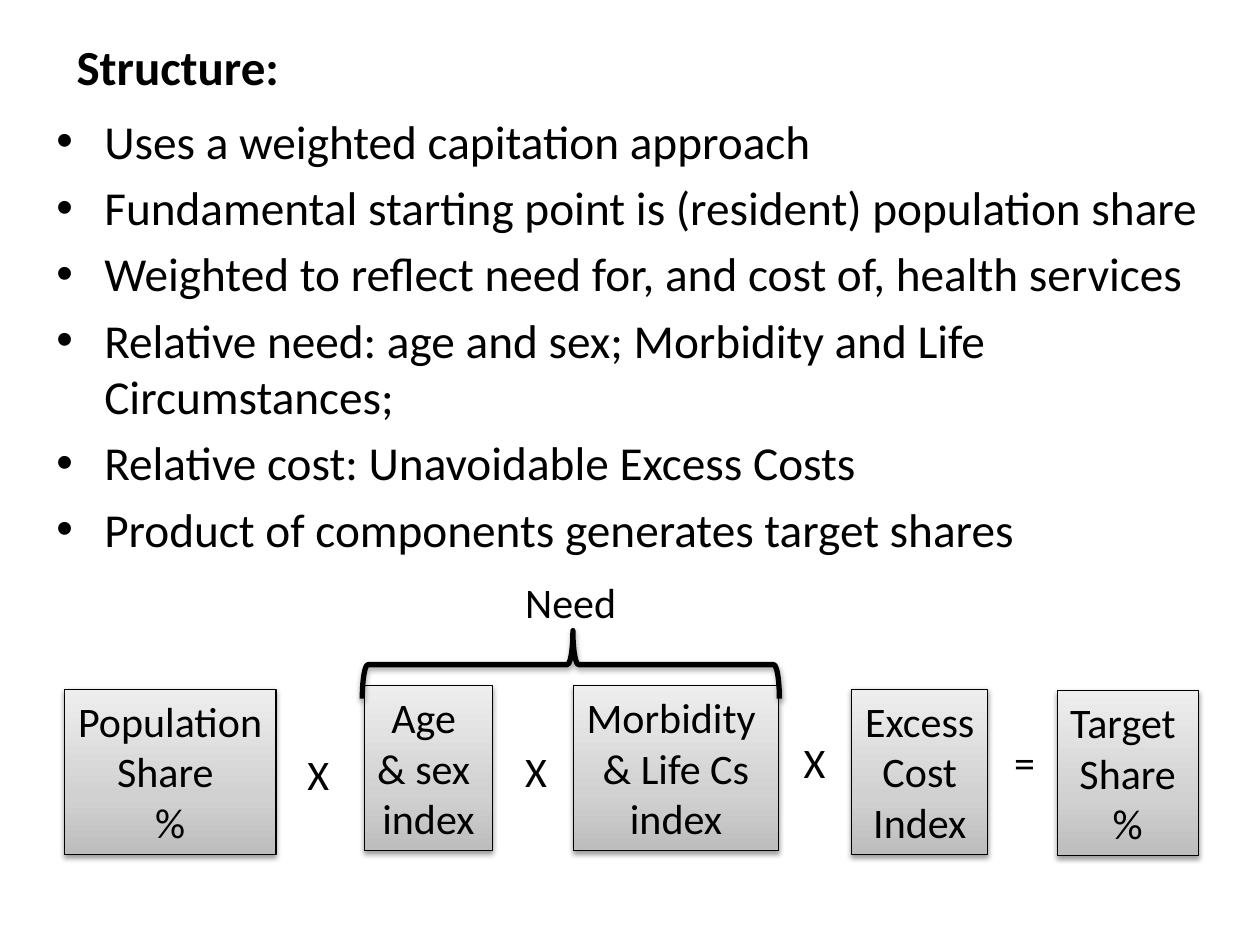
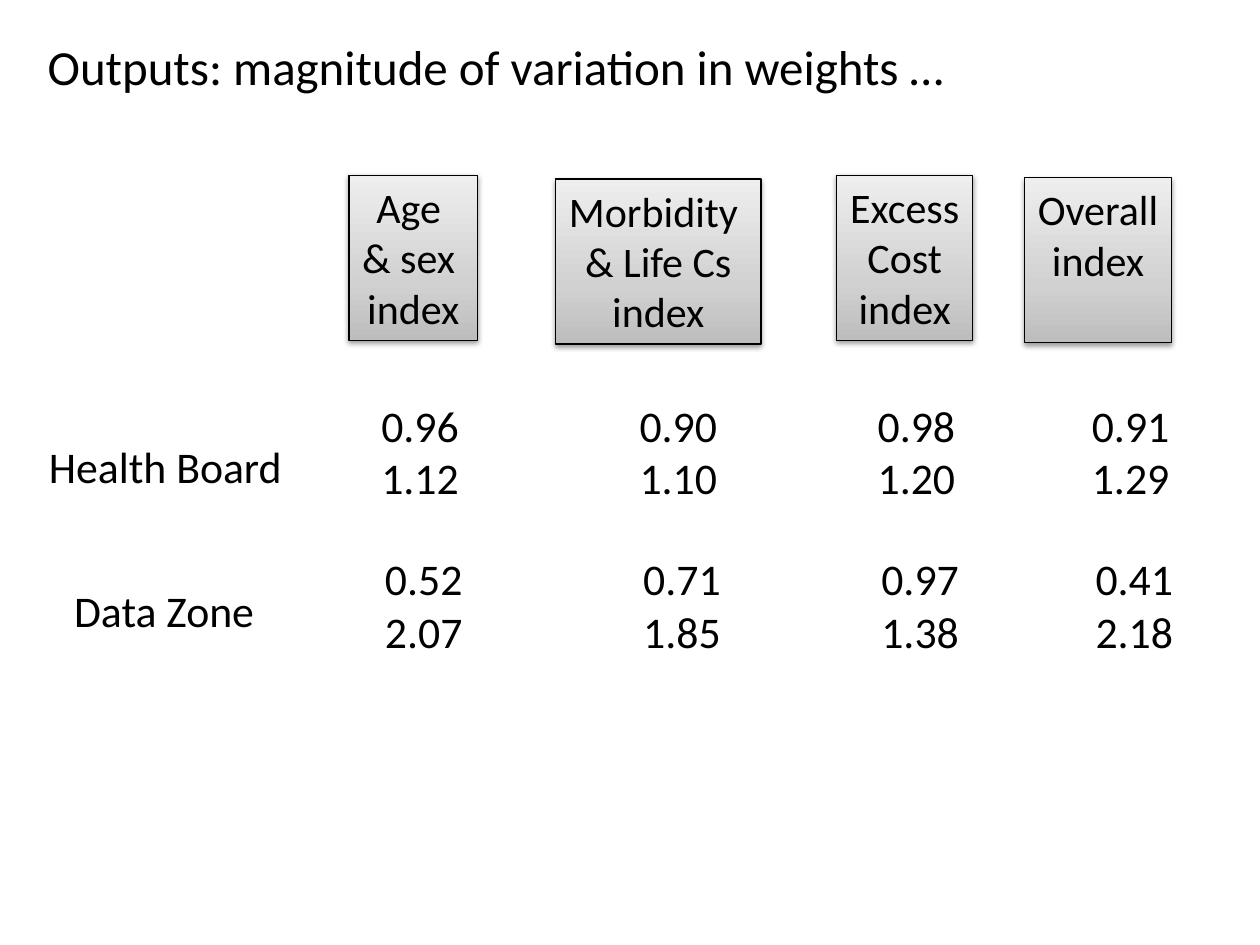
from lxml import etree
from pptx import Presentation
from pptx.dml.color import RGBColor
from pptx.enum.shapes import MSO_SHAPE as Preset
from pptx.enum.text import MSO_ANCHOR as Anchor, PP_ALIGN as Align
from pptx.oxml.ns import qn
from pptx.util import Inches, Pt

FONT = "Calibri"
BLACK = "000000"
GRADIENT = [(0, "BDBDBD"), (35, "D1D1D1"), (100, "EEEEEE")]
BOX_HEIGHT = 1.31
AGE_SEX = ["Age ", "& sex ", "index"]
MORBIDITY = ["Morbidity ", "& Life Cs", "index"]


def color(value):
    return RGBColor.from_string(value)


def write_text(frame, lines, size=24, bold=False, align=Align.LEFT,
               anchor=Anchor.TOP, wrap=True, bullet=False):
    frame.word_wrap = wrap
    frame.vertical_anchor = anchor
    for index, line in enumerate(lines):
        paragraph = frame.add_paragraph() if index else frame.paragraphs[0]
        paragraph.alignment = align
        run = paragraph.add_run()
        run.text = line
        run.font.name = FONT
        run.font.size = Pt(size)
        run.font.bold = bold
        run.font.color.rgb = color(BLACK)
        if bullet:
            add_bullet(paragraph, size)


def add_bullet(paragraph, size):
    paragraph.space_before = Pt(size * 0.2)
    properties = paragraph._p.get_or_add_pPr()
    properties.set("marL", str(Inches(0.38)))
    properties.set("indent", str(-Inches(0.38)))
    etree.SubElement(properties, qn("a:buFont"), typeface="Arial")
    etree.SubElement(properties, qn("a:buChar"), char="•")


def add_label(slide, lines, left, top, width, height, **text_format):
    label = slide.shapes.add_textbox(Inches(left), Inches(top), Inches(width), Inches(height))
    write_text(label.text_frame, lines, **text_format)


def add_title(slide, text, left, bold=False):
    add_label(slide, [text], left, 0.21, 9, 0.63, size=28, bold=bold, anchor=Anchor.MIDDLE)


def add_color_element(parent, value):
    return etree.SubElement(parent, qn("a:srgbClr"), val=value)


def set_shadow(shape, opacity, blur, distance):
    shape.shadow.inherit = False
    effects = shape._element.spPr.find(qn("a:effectLst"))
    shadow = etree.SubElement(effects, qn("a:outerShdw"), blurRad=str(Pt(blur)),
                              dist=str(Pt(distance)), dir="5400000", rotWithShape="0")
    etree.SubElement(add_color_element(shadow, BLACK), qn("a:alpha"), val=str(opacity * 1000))


def set_gradient(shape):
    shape.fill.gradient()
    shape.fill.gradient_angle = 90
    stops = shape._element.spPr.find(qn("a:gradFill")).find(qn("a:gsLst"))
    for stop in list(stops):
        stops.remove(stop)
    for position, value in GRADIENT:
        add_color_element(etree.SubElement(stops, qn("a:gs"), pos=str(position * 1000)), value)


def set_line(shape, width):
    shape.line.color.rgb = color(BLACK)
    shape.line.width = Pt(width)


def add_index_box(slide, lines, left, top, width):
    box = slide.shapes.add_shape(Preset.RECTANGLE, Inches(left), Inches(top),
                                 Inches(width), Inches(BOX_HEIGHT))
    set_gradient(box)
    set_line(box, 0.75)
    set_shadow(box, 38, 3.1, 1.6)
    write_text(box.text_frame, lines, align=Align.CENTER, wrap=False)


def add_need_brace(slide):
    brace = slide.shapes.add_shape(Preset.LEFT_BRACE, Inches(4.26), Inches(3.62),
                                   Inches(0.54), Inches(3.31))
    brace.rotation = 90
    brace.adjustments[0] = 0.083
    brace.adjustments[1] = 0.495
    brace.fill.background()
    set_line(brace, 3)
    set_shadow(brace, 35, 3.1, 1.8)


def add_range_table(slide, rows, left, top, first_width, anchor):
    widths = [first_width, 2.05, 1.89, 1.7]
    row_height = 0.41
    table = slide.shapes.add_table(len(rows), len(widths), Inches(left), Inches(top),
                                   Inches(sum(widths)), Inches(row_height * len(rows))).table
    table.first_row = False
    table.horz_banding = False
    for column, width in zip(table.columns, widths):
        column.width = Inches(width)
    for row_index, values in enumerate(rows):
        for column_index, value in enumerate(values):
            cell = table.cell(row_index, column_index)
            cell.fill.background()
            cell.margin_left = cell.margin_right = cell.margin_top = cell.margin_bottom = 0
            write_text(cell.text_frame, [value], size=25, align=Align.RIGHT)
            cell.vertical_anchor = anchor


def build_structure(slide):
    add_title(slide, "Structure:", 0.51, bold=True)
    add_label(slide, [
        "Uses a weighted capitation approach",
        "Fundamental starting point is (resident) population share",
        "Weighted to reflect need for, and cost of, health services",
        "Relative need: age and sex; Morbidity and Life Circumstances;",
        "Relative cost: Unavoidable Excess Costs",
        "Product of components generates target shares",
    ], 0.35, 0.84, 9.37, 3.69, size=27, bullet=True)
    for lines, left, top, width in [
        (["Population", "Share ", "%"], 0.51, 5.47, 1.68),
        (AGE_SEX, 2.89, 5.44, 1.02),
        (MORBIDITY, 4.55, 5.44, 1.63),
        (["Excess", "Cost", "Index"], 6.76, 5.47, 1.08),
        (["Target ", "Share", "%"], 8.39, 5.48, 1.12),
    ]:
        add_index_box(slide, lines, left, top, width)
    for sign, left, top in [("X", 2.34, 5.89), ("X", 4.07, 5.87),
                            ("X", 6.28, 5.8), ("=", 7.95, 5.8)]:
        add_label(slide, [sign], left, top, 0.38, 0.5)
    add_need_brace(slide)
    add_label(slide, ["Need"], 4.07, 4.53, 1.09, 0.5)


def build_outputs(slide):
    add_title(slide, "Outputs: magnitude of variation in weights …", 0.28)
    for lines, left, top, width in [
        (AGE_SEX, 2.77, 1.39, 1.02),
        (MORBIDITY, 4.41, 1.42, 1.63),
        (["Excess", "Cost", "index"], 6.64, 1.39, 1.08),
        (["Overall", "index"], 8.13, 1.41, 1.17),
    ]:
        add_index_box(slide, lines, left, top, width)
    add_label(slide, ["Health Board"], 0.29, 3.44, 2.11, 0.52, size=25)
    add_range_table(slide, [["0.96", "0.90", "0.98", "0.91"],
                            ["1.12", "1.10", "1.20", "1.29"]], 2.79, 3.18, 0.85, Anchor.MIDDLE)
    add_label(slide, ["Data Zone"], 0.49, 4.58, 1.81, 0.52, size=25)
    add_range_table(slide, [["0.52", "0.71", "0.97", "0.41"],
                            ["2.07", "1.85", "1.38", "2.18"]], 2.88, 4.4, 0.79, Anchor.BOTTOM)


def main():
    presentation = Presentation()
    presentation.slide_width = Inches(10)
    presentation.slide_height = Inches(7.5)
    blank = presentation.slide_layouts[6]
    for build in (build_structure, build_outputs):
        build(presentation.slides.add_slide(blank))
    presentation.save("out.pptx")


if __name__ == "__main__":
    main()
